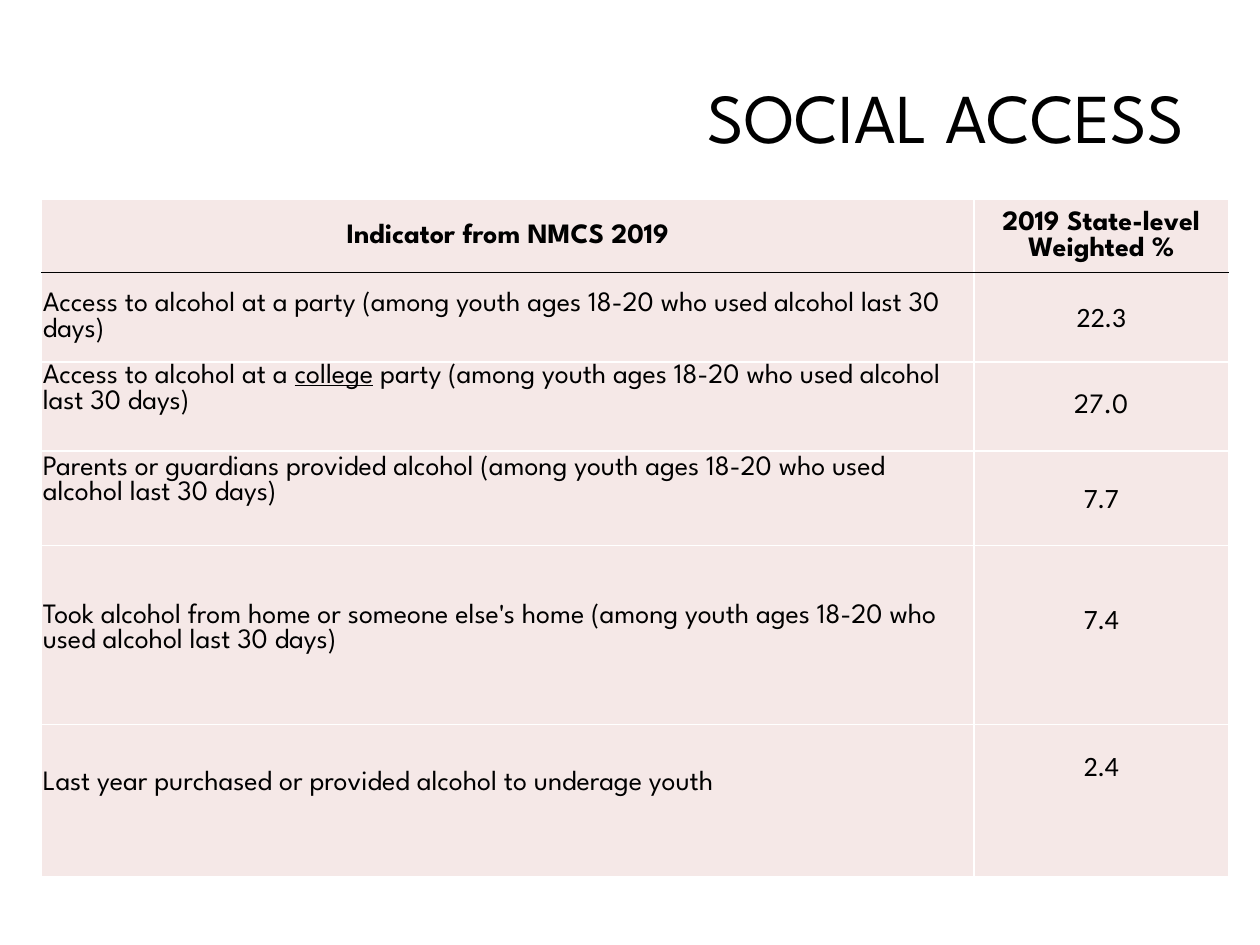
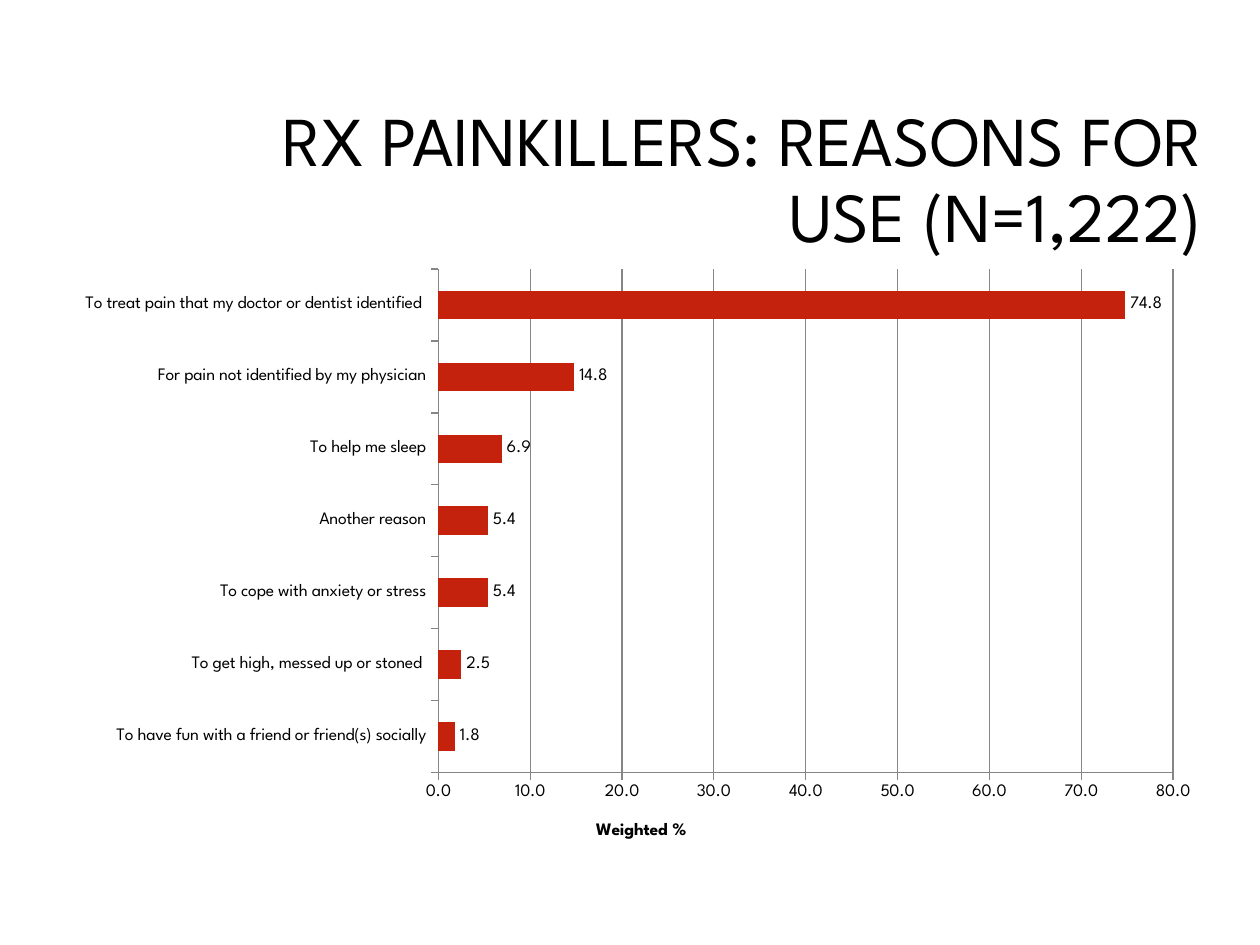
from lxml import etree
from pptx import Presentation
from pptx import util as u
from pptx.chart import data as cd
from pptx.dml.color import RGBColor
from pptx.enum import chart as ch, text as tx
from pptx.oxml import ns

WIDE, HIGH = u.Inches(10), u.Inches(7.5)
FONT, ALT = "League Spartan", "Calibri"
HUES = {"ink": "000000", "paper": "FFFFFF", "blush": "F5E8E7",
        "bar": "C4220D", "grid": "868686"}
HEAD = ["Indicator from NMCS 2019", "2019 State-level Weighted %"]
AGES = "(among youth ages 18-20 who used alcohol last 30 days)"
ROWS = [
    (["Access to alcohol at a party " + AGES], "22.3", ALT, 0, 0),
    (["Access to alcohol at a ", "college", " party " + AGES], "27.0", FONT, 0.28, 0),
    (["Parents or guardians provided alcohol " + AGES], "7.7", ALT, 0.28, 0),
    (["Took alcohol from home or someone else's home " + AGES], "7.4", ALT, 0.1, 0.25),
    (["Last year purchased or provided alcohol to underage youth"], "2.4", ALT, 0.28, 0.54),
]
COLS = [7.4, 2.02]
TALL = [0.58, 0.71, 0.71, 0.75, 1.42, 1.21]
CAUSES = {
    "To have fun with a friend or friend(s) socially": 1.8,
    "To get high, messed up or stoned ": 2.5,
    "To cope with anxiety or stress": 5.4,
    "Another reason": 5.4,
    "To help me sleep": 6.9,
    "For pain not identified by my physician": 14.8,
    "To treat pain that my doctor or dentist identified ": 74.8,
}


def hue(name):
    return RGBColor.from_string(HUES[name])


def box(left, top, wide, high):
    return [int(side * span) for side, span in
            zip((left, top, wide, high), (WIDE, HIGH) * 2)]


def style(font, size, name=FONT, bold=False):
    font.size, font.name, font.bold = u.Pt(size), name, bold
    font.color.rgb = hue("ink")


def start(deck, words, area):
    slide = deck.slides.add_slide(deck.slide_layouts[5])
    title = slide.shapes.title
    title.left, title.top, title.width, title.height = area
    frame = title.text_frame
    frame.text = words
    frame.auto_size = tx.MSO_AUTO_SIZE.NONE
    frame.vertical_anchor = tx.MSO_ANCHOR.MIDDLE
    para = frame.paragraphs[0]
    para.alignment = tx.PP_ALIGN.RIGHT
    para.line_spacing = u.Pt(43.2)
    style(para.font, 40)
    return slide


def edge(cell, side, name):
    line = etree.SubElement(cell._tc.get_or_add_tcPr(), ns.qn("a:ln" + side),
                            w=str(u.Pt(1)))
    fill = etree.SubElement(line, ns.qn("a:solidFill"))
    etree.SubElement(fill, ns.qn("a:srgbClr"), val=HUES[name])


def put(cell, parts, dark="", mid=True, name=FONT, bold=False, lift=0):
    for side in "LRTB":
        edge(cell, side, "ink" if side == dark else "paper")
    cell.fill.solid()
    cell.fill.fore_color.rgb = hue("blush")
    cell.margin_left = cell.margin_right = cell.margin_top = u.Inches(0.01)
    cell.margin_bottom = u.Inches(lift)
    cell.vertical_anchor = tx.MSO_ANCHOR.MIDDLE
    para = cell.text_frame.paragraphs[0]
    para.alignment = tx.PP_ALIGN.CENTER if mid else tx.PP_ALIGN.LEFT
    for part in parts:
        run = para.add_run()
        run.text = part
        style(run.font, 16, name, bold)
        if part == "college":
            run.font.underline = True


def grid(slide, area):
    table = slide.shapes.add_table(len(TALL), len(COLS), *area).table
    for col, size in zip(table.columns, COLS):
        col.width = int(area[2] * size / sum(COLS))
    for row, size in zip(table.rows, TALL):
        row.height = int(area[3] * size / sum(TALL))
    for col, words in enumerate(HEAD):
        put(table.cell(0, col), [words], "B", bold=True)
    for row, (parts, rate, name, low, lift) in enumerate(ROWS, 1):
        dark = "T" if row == 1 else ""
        put(table.cell(row, 0), parts, dark, mid=False, lift=low)
        put(table.cell(row, 1), [rate], dark, name=name, lift=lift)


def layout(**spots):
    node = etree.Element(ns.qn("c:layout"))
    manual = etree.SubElement(node, ns.qn("c:manualLayout"))
    for key, val in spots.items():
        etree.SubElement(manual, ns.qn("c:" + key), val=str(val))
    return node


def place(node, index, **spots):
    for old in node.findall(ns.qn("c:layout")):
        node.remove(old)
    node.insert(index, layout(**spots))


def bars(slide, area):
    data = cd.CategoryChartData(number_format="0.0")
    data.categories = list(CAUSES)
    data.add_series("Series 1", list(CAUSES.values()))
    chart = slide.shapes.add_chart(ch.XL_CHART_TYPE.BAR_CLUSTERED, *area, data).chart
    chart.has_legend = chart.has_title = False
    style(chart.font, 10)
    plot = chart.plots[0]
    plot.gap_width, plot.vary_by_categories = 150, False
    fill = plot.series[0].format.fill
    fill.solid()
    fill.fore_color.rgb = hue("bar")
    plot.has_data_labels = True
    tags = plot.data_labels
    tags.show_value = True
    tags.position = ch.XL_LABEL_POSITION.OUTSIDE_END
    tags.number_format, tags.number_format_is_linked = "0.0", False
    style(tags.font, 10)

    names, scale = chart.category_axis, chart.value_axis
    scale.minimum_scale, scale.maximum_scale, scale.major_unit = 0, 80, 10
    scale.has_major_gridlines = True
    names.has_major_gridlines = False
    scale.tick_labels.number_format = "0.0"
    scale.tick_labels.number_format_is_linked = False
    for axis in (names, scale):
        axis.major_tick_mark = ch.XL_TICK_MARK.OUTSIDE
        axis.minor_tick_mark = ch.XL_TICK_MARK.NONE
        style(axis.tick_labels.font, 10)
    for part in (names, scale, scale.major_gridlines):
        part.format.line.color.rgb = hue("grid")
        part.format.line.width = u.Pt(0.75)

    title = scale.axis_title
    title.text_frame.text = "Weighted %"
    style(title.text_frame.paragraphs[0].font, 10, bold=True)
    place(title._element, 1, xMode="edge", yMode="edge", x=0.46, y=0.93)
    place(chart._chartSpace.chart.plotArea, 0, layoutTarget="inner",
          xMode="edge", yMode="edge", x=0.326, y=0.02, w=0.638, h=0.834)


def main():
    deck = Presentation()
    deck.slide_width, deck.slide_height = WIDE, HIGH
    access = start(deck, "SOCIAL ACCESS", box(0.408, 0.033, 0.542, 0.188))
    grid(access, box(0.033, 0.211, 0.942, 0.717))
    relief = start(deck, "RX PAINKILLERS: REASONS FOR USE (N=1,222)",
                   box(0.167, 0.089, 0.797, 0.204))
    bars(relief, box(0.05, 0.272, 0.914, 0.639))
    deck.save("out.pptx")


if __name__ == "__main__":
    main()
